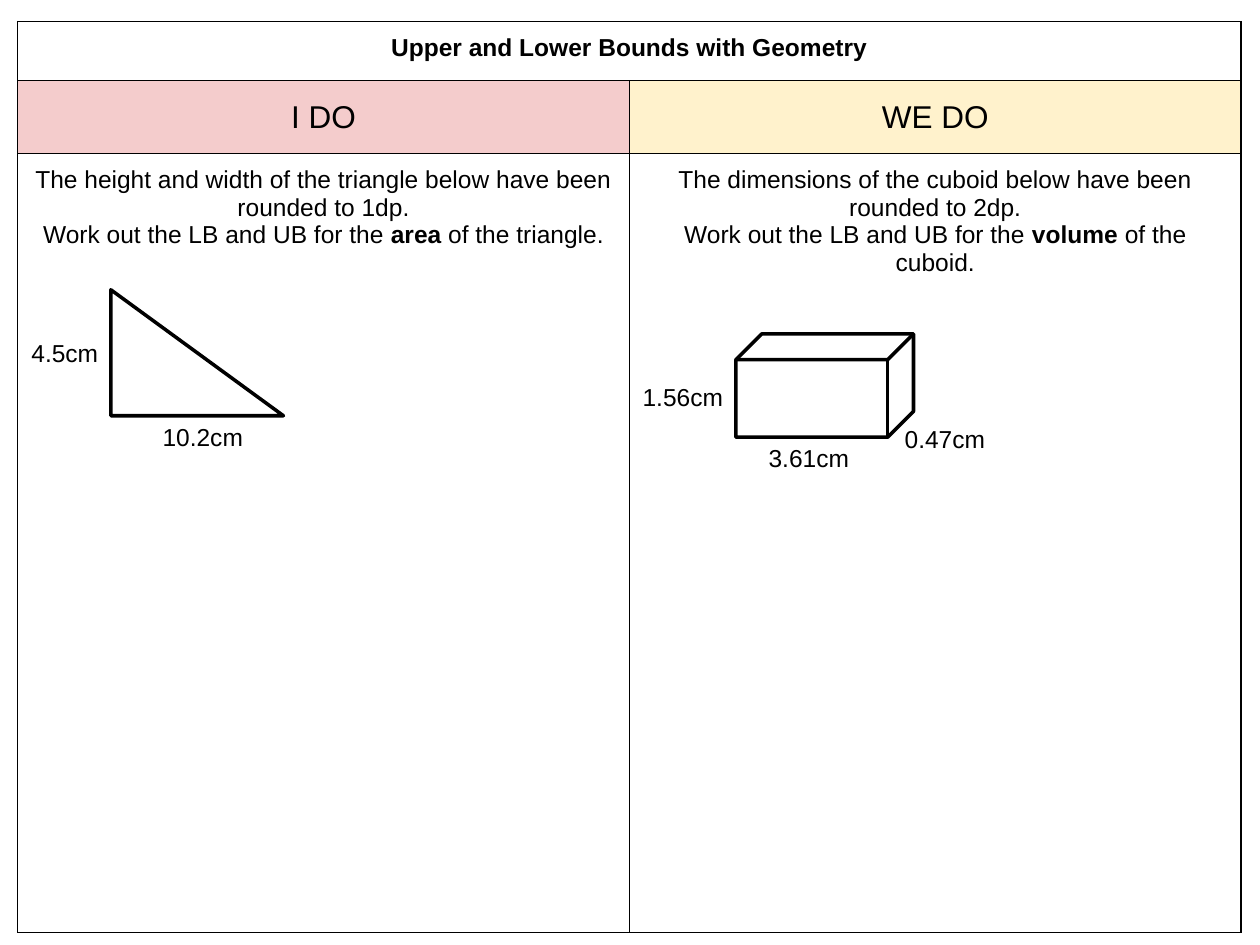
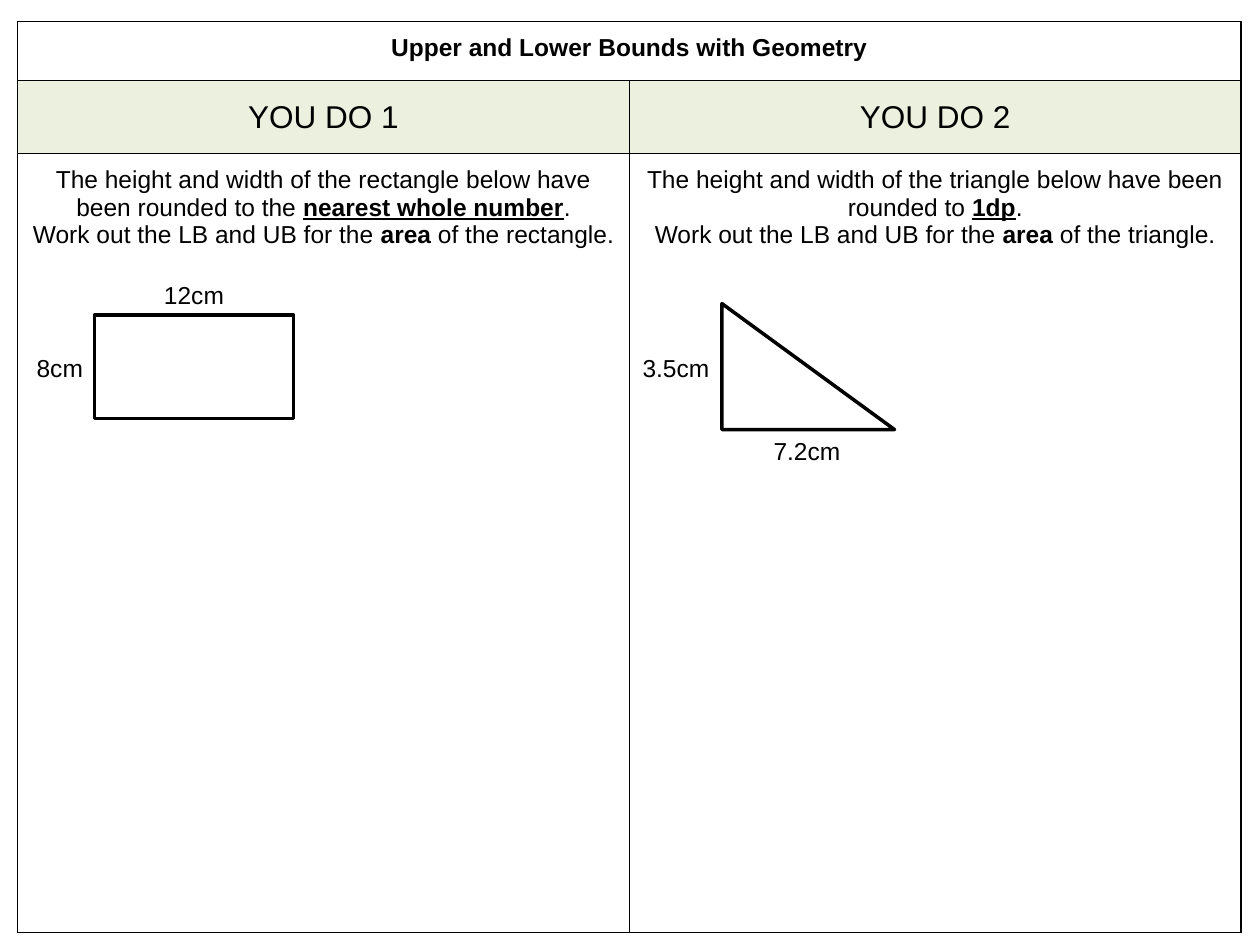
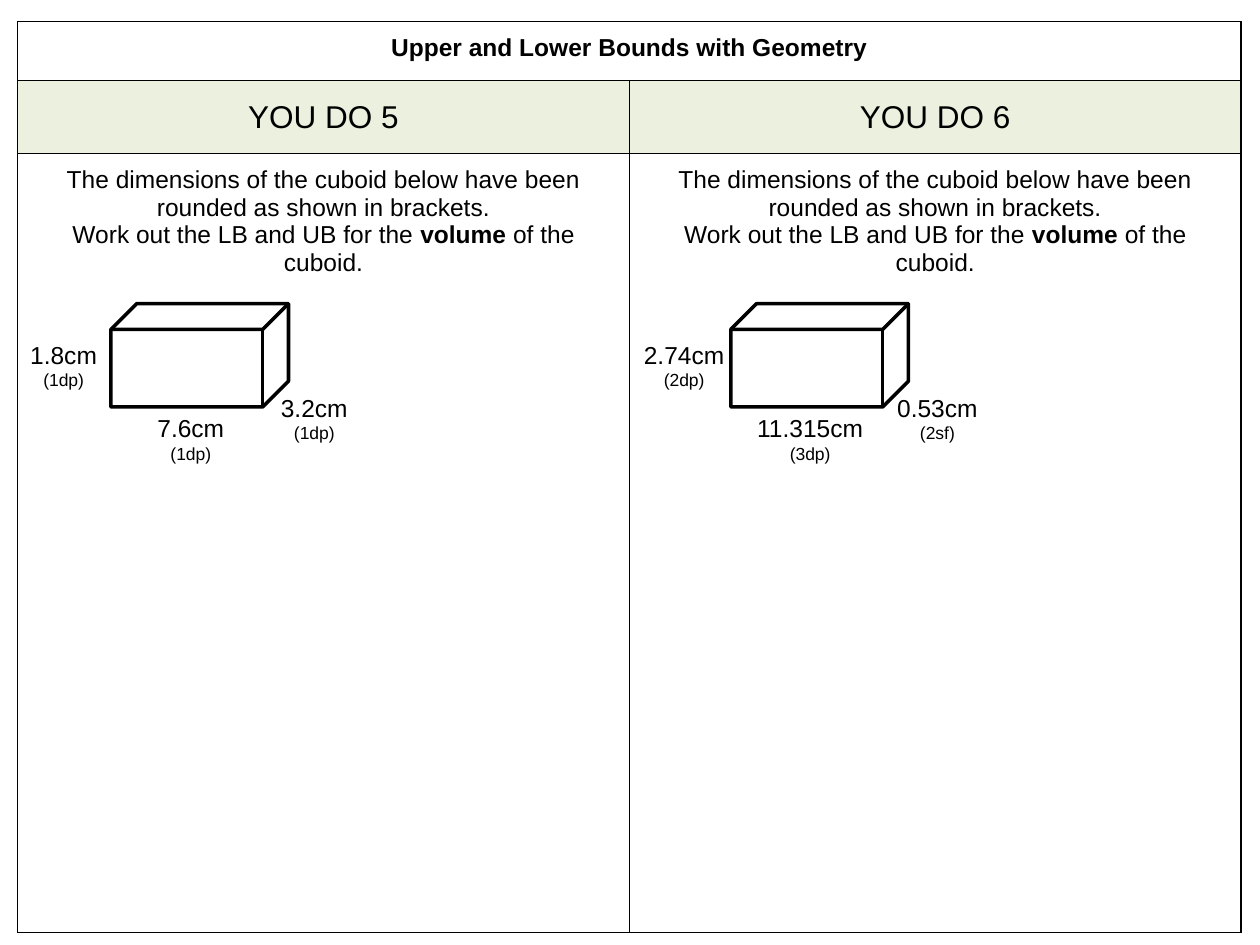
from typing import NamedTuple

from lxml.etree import SubElement
from pptx import Presentation
from pptx.dml.color import RGBColor
from pptx.enum.shapes import MSO_SHAPE
from pptx.enum.text import MSO_ANCHOR, MSO_AUTO_SIZE, PP_ALIGN
from pptx.oxml.ns import qn
from pptx.util import Inches, Pt

COLORS = {
    "ink": "000000",
    "i_do": "F4CCCC",
    "we_do": "FFF2CC",
    "you_do": "EBF1DE",
}
FONT = "Arial"
SIZES = {"heading": 18, "body": 14, "note": 10}
TITLE = "Upper and Lower Bounds with Geometry"
TABLE_AT = (0.14, 0.17, 9.71, 7.23)
ROW_HEIGHTS = (0.47, 0.58, 6.18)
LABEL_HEIGHT, NOTED_HEIGHT = 0.34, 0.5
CELL_MARGINS = dict.fromkeys(
    ("margin_left", "margin_top", "margin_right", "margin_bottom"), Inches(0.1))


class Run(NamedTuple):
    text: str
    bold: bool = False
    underline: bool = False


class Figure(NamedTuple):
    kind: MSO_SHAPE
    left: float
    top: float
    width: float
    height: float


class Label(NamedTuple):
    text: str
    left: float
    top: float
    width: float
    note: str = ""


class Problem(NamedTuple):
    heading: str
    color: str
    given: list[Run]
    measure: str
    solid: str
    figure: Figure
    labels: list[Label]


def triangle(left: float, top: float) -> Figure:
    return Figure(MSO_SHAPE.RIGHT_TRIANGLE, left, top, 1.37, 1)


def cuboid(left: float, top: float) -> Figure:
    return Figure(MSO_SHAPE.CUBE, left, top, 1.41, 0.82)


TRIANGLE_GIVEN = "The height and width of the triangle below have been rounded to "
CUBOID_GIVEN = "The dimensions of the cuboid below have been rounded "

SLIDES = [
    (
        Problem("I DO", "i_do", [Run(TRIANGLE_GIVEN + "1dp.")],
                "area", "triangle", triangle(0.88, 2.3),
                [Label("4.5cm", 0.15, 2.63, 0.73),
                 Label("10.2cm", 1.19, 3.3, 0.84)]),
        Problem("WE DO", "we_do", [Run(CUBOID_GIVEN + "to 2dp.")],
                "volume", "cuboid", cuboid(5.84, 2.65),
                [Label("1.56cm", 5, 2.98, 0.84),
                 Label("3.61cm", 6, 3.47, 0.84),
                 Label("0.47cm", 7.08, 3.32, 0.84)]),
    ),
    (
        Problem("YOU DO 1", "you_do",
                [Run("The height and width of the rectangle below have been rounded to the "),
                 Run("nearest whole number", True, True), Run(".")],
                "area", "rectangle",
                Figure(MSO_SHAPE.RECTANGLE, 0.75, 2.5, 1.58, 0.82),
                [Label("8cm", 0.19, 2.75, 0.57),
                 Label("12cm", 1.2, 2.17, 0.68)]),
        Problem("YOU DO 2", "you_do",
                [Run(TRIANGLE_GIVEN), Run("1dp", True, True), Run(".")],
                "area", "triangle", triangle(5.73, 2.41),
                [Label("3.5cm", 5, 2.75, 0.73),
                 Label("7.2cm", 6.04, 3.41, 0.73)]),
    ),
    (
        Problem("YOU DO 5", "you_do", [Run(CUBOID_GIVEN + "as shown in brackets.")],
                "volume", "cuboid", cuboid(0.88, 2.41),
                [Label("1.8cm", 0.14, 2.65, 0.73, "(1dp)"),
                 Label("7.6cm", 1.15, 3.23, 0.73, "(1dp)"),
                 Label("3.2cm", 2.13, 3.07, 0.73, "(1dp)")]),
        Problem("YOU DO 6", "you_do", [Run(CUBOID_GIVEN + "as shown in brackets.")],
                "volume", "cuboid", cuboid(5.8, 2.41),
                [Label("2.74cm", 5.01, 2.65, 0.84, "(2dp)"),
                 Label("11.315cm", 5.9, 3.23, 1.06, "(3dp)"),
                 Label("0.53cm", 7.02, 3.07, 0.84, "(2sf)")]),
    ),
]


def rgb(name: str) -> RGBColor:
    return RGBColor.from_string(COLORS[name])


def write(p, runs: list[Run], size: str = "body") -> None:
    p.alignment = PP_ALIGN.CENTER
    for run in runs:
        r = p.add_run()
        r.text = run.text
        formats = {"name": FONT, "size": Pt(SIZES[size]),
                   "bold": run.bold, "underline": run.underline}
        for name, value in formats.items():
            setattr(r.font, name, value)
        r.font.color.rgb = rgb("ink")


def format_cell(cell, color: str = "") -> None:
    """Set the margins, thin borders and fill of a table cell."""
    for name, value in CELL_MARGINS.items():
        setattr(cell, name, value)
    tcPr = cell._tc.get_or_add_tcPr()
    for side in ("a:lnL", "a:lnR", "a:lnT", "a:lnB"):
        ln = SubElement(tcPr, qn(side), w=str(Pt(0.75)))
        fill = SubElement(ln, qn("a:solidFill"))
        SubElement(fill, qn("a:srgbClr"), val=COLORS["ink"])
    if color:
        cell.fill.solid()
        cell.fill.fore_color.rgb = rgb(color)
    else:
        cell.fill.background()


def add_problem_table(slide, problems: tuple[Problem, ...]) -> None:
    columns = len(problems)
    table = slide.shapes.add_table(
        len(ROW_HEIGHTS), columns, *map(Inches, TABLE_AT)).table
    table.first_row = table.horz_banding = False
    for row, height in zip(table.rows, ROW_HEIGHTS):
        row.height = Inches(height)

    title = table.cell(0, 0)
    title.merge(table.cell(0, columns - 1))
    write(title.text_frame.paragraphs[0], [Run(TITLE, True)])

    for i, problem in enumerate(problems):
        top, heading, task = (table.cell(row, i) for row in range(3))
        format_cell(top)
        format_cell(heading, problem.color)
        format_cell(task)
        heading.vertical_anchor = MSO_ANCHOR.MIDDLE
        write(heading.text_frame.paragraphs[0], [Run(problem.heading)], "heading")
        tf = task.text_frame
        write(tf.paragraphs[0], problem.given)
        write(tf.add_paragraph(), [
            Run("Work out the LB and UB for the "),
            Run(problem.measure, True),
            Run(f" of the {problem.solid}."),
        ])


def add_figure(slide, figure: Figure) -> None:
    sp = slide.shapes.add_shape(figure.kind, *map(Inches, figure[1:]))
    sp.shadow.inherit = False
    sp.fill.background()
    sp.line.width = Pt(2)
    sp.line.color.rgb = rgb("ink")
    SubElement(sp._element.spPr.find(qn("a:ln")), qn("a:round"))


def add_label(slide, label: Label) -> None:
    height = NOTED_HEIGHT if label.note else LABEL_HEIGHT
    sp = slide.shapes.add_textbox(
        *map(Inches, (label.left, label.top, label.width, height)))
    tf = sp.text_frame
    tf.word_wrap = False
    tf.auto_size = MSO_AUTO_SIZE.SHAPE_TO_FIT_TEXT
    write(tf.paragraphs[0], [Run(label.text)])
    if label.note:
        write(tf.add_paragraph(), [Run(label.note)], "note")


def main() -> None:
    prs = Presentation()
    prs.slide_width, prs.slide_height = Inches(10), Inches(7.5)
    for problems in SLIDES:
        slide = prs.slides.add_slide(prs.slide_layouts[6])
        add_problem_table(slide, problems)
        for problem in problems:
            add_figure(slide, problem.figure)
            for label in problem.labels:
                add_label(slide, label)
    prs.save("out.pptx")


if __name__ == "__main__":
    main()
